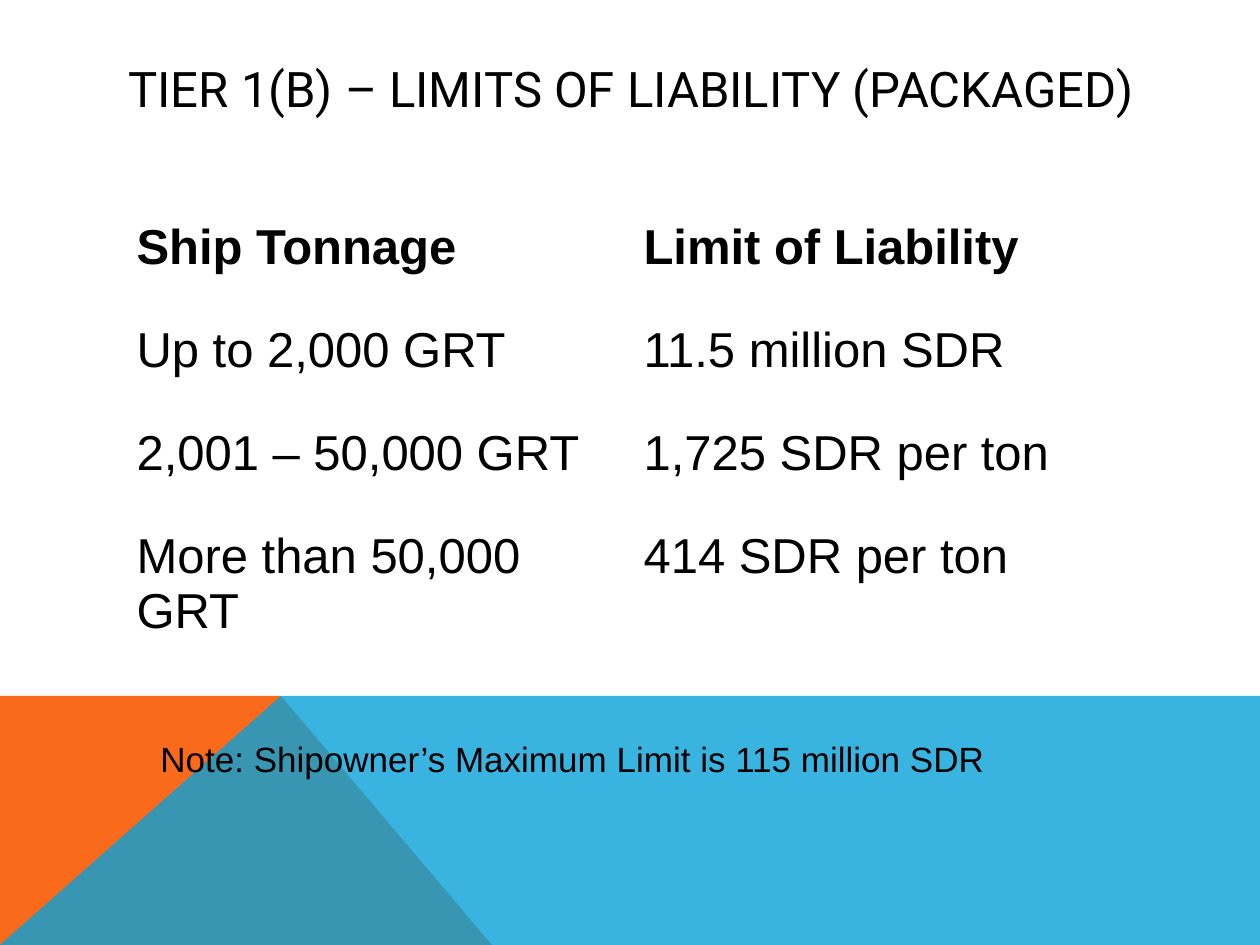
import lxml.etree
import pptx
import pptx.dml.color
import pptx.enum.text
import pptx.oxml.ns
import pptx.util

EMU_PER_PX = 914400 / 126
LIMITS = [
    ("Ship Tonnage", "Limit of Liability"),
    ("Up to 2,000 GRT", "11.5 million SDR"),
    ("2,001 – 50,000 GRT", "1,725 SDR per ton"),
    ("More than 50,000 GRT", "414 SDR per ton"),
]


def px(length):
    """Turn whole pixels into EMU."""
    return pptx.util.Emu(round(length * EMU_PER_PX))


def color(hex_code):
    """Turn a hex string into a colour."""
    return pptx.dml.color.RGBColor.from_string(hex_code)


def add_run(paragraph, text, size, font="Arial", bold=False):
    """Append one black run to a paragraph."""
    run = paragraph.add_run()
    run.text = text
    run.font.size = pptx.util.Pt(size)
    run.font.name = font
    run.font.bold = bold
    run.font.color.rgb = color("000000")


def add_polygon(slide, origin, points, fill, opacity=100):
    """Draw a closed, unlined polygon with points relative to the origin."""
    builder = slide.shapes.build_freeform(*points[0], scale=EMU_PER_PX)
    builder.add_line_segments(points[1:], close=True)
    polygon = builder.convert_to_shape(px(origin[0]), px(origin[1]))
    polygon.shadow.inherit = False
    polygon.line.fill.background()
    polygon.fill.solid()
    polygon.fill.fore_color.rgb = color(fill)
    if opacity < 100:
        srgb = polygon.element.spPr.find(".//" + pptx.oxml.ns.qn("a:srgbClr"))
        alpha = lxml.etree.SubElement(srgb, pptx.oxml.ns.qn("a:alpha"))
        alpha.set("val", str(opacity * 1000))


def add_footer_band(slide, left, top, width, height):
    """Draw the orange wedge and the translucent blue band over it."""
    peak, wedge_end = 281, 492
    add_polygon(slide, (left, top),
                [(0, height), (0, 0), (peak, 0), (wedge_end, height)], "F96A1B")
    add_polygon(slide, (left, top),
                [(0, height), (peak, 0), (width, 0), (width, height)], "08A1D9", 80)


def add_title(slide, left, top, width, height):
    """Place the centred slide title."""
    title = slide.shapes.add_textbox(px(left), px(top), px(width), px(height))
    frame = title.text_frame
    frame.word_wrap = True
    frame.margin_left = frame.margin_right = 0
    frame.vertical_anchor = pptx.enum.text.MSO_ANCHOR.MIDDLE
    frame.paragraphs[0].alignment = pptx.enum.text.PP_ALIGN.CENTER
    add_run(frame.paragraphs[0], "TIER 1(B) – LIMITS OF LIABILITY (PACKAGED)", 28, "Roboto")


def add_limits_table(slide, left, top, width, height):
    """Place the unfilled tonnage table with a taller last row."""
    limits = slide.shapes.add_table(
        len(LIMITS), 2, px(left), px(top), px(width), px(height)).table
    limits.first_row = limits.horz_banding = False
    row_height = 103
    last_height = height - row_height * (len(LIMITS) - 1)
    for column in limits.columns:
        column.width = px(width / 2)
    for row_index, entries in enumerate(LIMITS):
        is_last = row_index == len(LIMITS) - 1
        limits.rows[row_index].height = px(last_height if is_last else row_height)
        for column_index, entry in enumerate(entries):
            cell = limits.cell(row_index, column_index)
            cell.fill.background()
            add_run(cell.text_frame.paragraphs[0], entry, 28, bold=row_index == 0)


def add_note(slide, left, top, width, height):
    """Place the note on the maximum limit."""
    note = slide.shapes.add_textbox(px(left), px(top), px(width), px(height))
    note.text_frame.word_wrap = True
    add_run(note.text_frame.paragraphs[0],
            "Note: Shipowner’s Maximum Limit is 115 million SDR", 20)


def main():
    """Build and save the slide."""
    presentation = pptx.Presentation()
    presentation.slide_width, presentation.slide_height = px(1260), px(945)
    slide = presentation.slides.add_slide(presentation.slide_layouts[6])
    add_footer_band(slide, 0, 696, 1260, 249)
    add_title(slide, 113, 50, 1036, 76)
    add_limits_table(slide, 124, 214, 1014, 438)
    add_note(slide, 148, 731, 900, 55)
    presentation.save("out.pptx")


if __name__ == "__main__":
    main()
